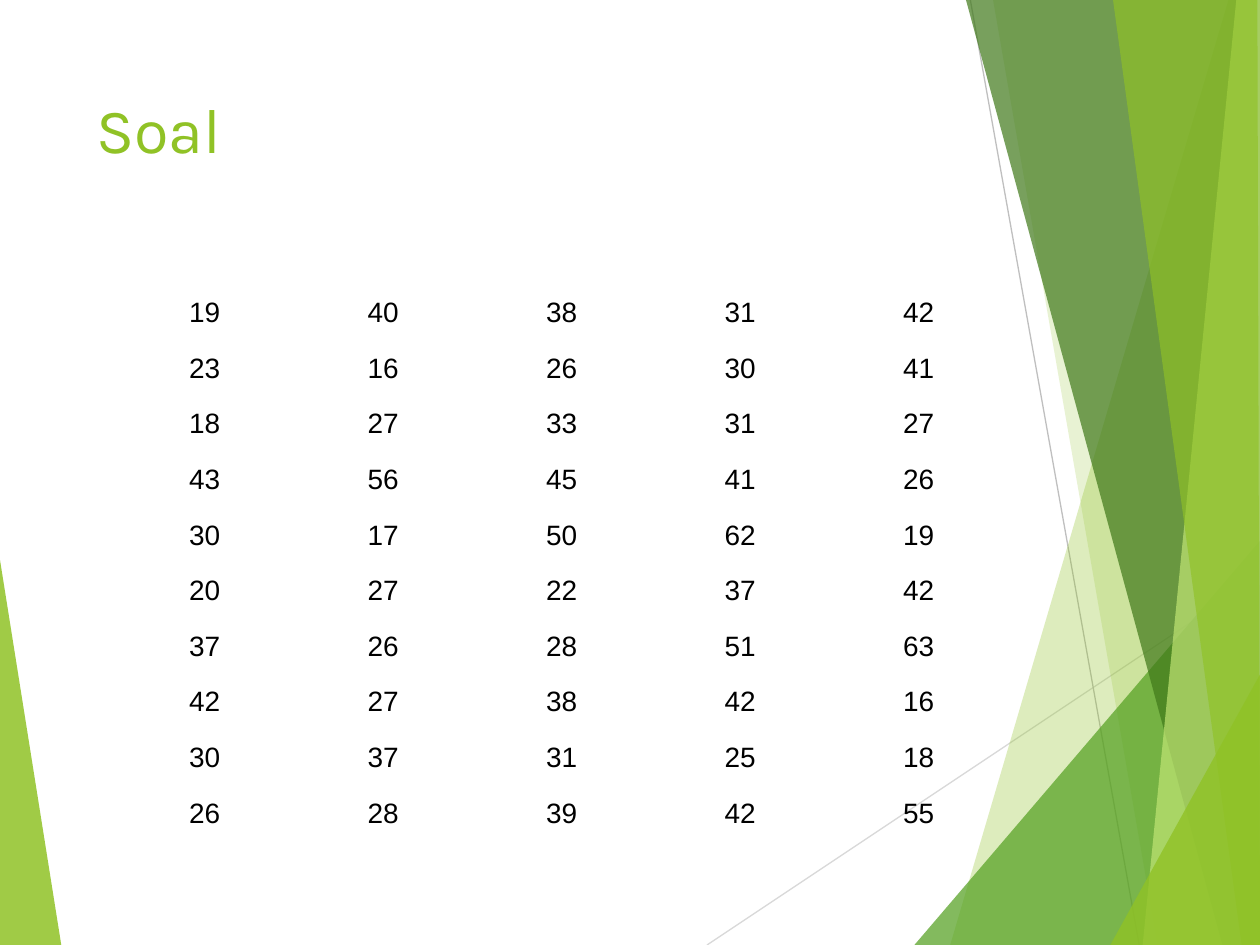
from dataclasses import dataclass

from lxml import etree
from pptx import Presentation
from pptx import util as u
from pptx.dml.color import RGBColor
from pptx.enum import shapes, text
from pptx.oxml import ns

Pt = u.Pt


@dataclass(frozen=True)
class Theme:
    lime: str = "90C226"
    green: str = "54A021"
    forest: str = "3F7819"
    pale: str = "C0E474"
    light_line: str = "D9D9D9"
    dark_line: str = "BFBFBF"
    ink: str = "000000"
    title_font: str = "Karla"
    body_font: str = "Arial"
    title_size: int = 36
    body_size: int = 16


THEME = Theme()
WIDTH, HEIGHT = 720, 540
NO_STYLE = "{2D5ABB26-0587-4C30-8999-92F81FD0307C}"

LINES = [
    ((404, 540), (720.5, 329), THEME.light_line),
    ((554.5, 0), (651, 540), THEME.dark_line),
]

LEFT_FACET = ([(0, 320), (35, 540), (0, 540)], THEME.lime, 85)
RIGHT_FACETS = [
    ([(702, 0), (543, 540), (720, 540), (720, 0)], THEME.lime, 30),
    ([(567.5, 0), (661.5, 540), (720, 540), (720, 0)], THEME.lime, 20),
    ([(522.5, 540), (720, 309), (720, 540)], THEME.green, 72),
    ([(552, 0), (698.5, 540), (720, 540), (720, 0)], THEME.forest, 70),
    ([(706.5, 0), (653, 540), (720, 540), (720, 0)], THEME.pale, 70),
    ([(636, 0), (709.5, 540), (720, 540), (718.5, 0)], THEME.lime, 65),
    ([(634.5, 540), (720, 385.5), (720, 540)], THEME.lime, 80),
]

SCORES = [
    [19, 40, 38, 31, 42],
    [23, 16, 26, 30, 41],
    [18, 27, 33, 31, 27],
    [43, 56, 45, 41, 26],
    [30, 17, 50, 62, 19],
    [20, 27, 22, 37, 42],
    [37, 26, 28, 51, 63],
    [42, 27, 38, 42, 16],
    [30, 37, 31, 25, 18],
    [26, 28, 39, 42, 55],
]


def set_attrs(obj, values):
    for name, value in values.items():
        setattr(obj, name, value)


def write(p, content, font, size, color):
    r = p.add_run()
    r.text = content
    set_attrs(r.font, {"name": font, "size": Pt(size)})
    r.font.color.rgb = RGBColor.from_string(color)


def add_facet(s, points, color, opacity):
    corners = [(Pt(x), Pt(y)) for x, y in points]
    builder = s.shapes.build_freeform(*corners[0])
    builder.add_line_segments(corners[1:], close=True)
    sp = builder.convert_to_shape()
    sp.shadow.inherit = False
    sp.line.fill.background()
    sp.fill.solid()
    sp.fill.fore_color.rgb = RGBColor.from_string(color)
    clr = sp._element.spPr.find(".//" + ns.qn("a:srgbClr"))
    etree.SubElement(clr, ns.qn("a:alpha"), val=str(opacity * 1000))


def add_line(s, start, end, color):
    ends = [Pt(v) for v in (*start, *end)]
    line = s.shapes.add_connector(shapes.MSO_CONNECTOR.STRAIGHT, *ends)
    line.line.width = Pt(0.75)
    line.line.color.rgb = RGBColor.from_string(color)
    etree.SubElement(line._element.spPr, ns.qn("a:effectLst"))


def add_title(s, content):
    sp = s.shapes.add_textbox(Pt(48), Pt(48), Pt(500), Pt(104))
    tf = sp.text_frame
    set_attrs(tf, {"word_wrap": True, "vertical_anchor": text.MSO_ANCHOR.TOP})
    write(tf.paragraphs[0], content, THEME.title_font, THEME.title_size, THEME.lime)


def add_scores(s, rows):
    frame = s.shapes.add_table(
        len(rows), len(rows[0]), Pt(66), Pt(156), Pt(510), Pt(318)
    )
    table = frame.table
    set_attrs(table, {"first_row": False, "horz_banding": False})
    table._tbl.tblPr.find(ns.qn("a:tableStyleId")).text = NO_STYLE
    cell_format = {
        "vertical_anchor": text.MSO_ANCHOR.BOTTOM,
        "margin_left": Pt(0.75),
        "margin_right": Pt(0.75),
        "margin_top": Pt(0.75),
        "margin_bottom": 0,
    }
    for i, row in enumerate(rows):
        for j, score in enumerate(row):
            cell = table.cell(i, j)
            set_attrs(cell, cell_format)
            cell.fill.background()
            p = cell.text_frame.paragraphs[0]
            p.alignment = text.PP_ALIGN.CENTER
            write(p, str(score), THEME.body_font, THEME.body_size, THEME.ink)


def main():
    prs = Presentation()
    set_attrs(prs, {"slide_width": Pt(WIDTH), "slide_height": Pt(HEIGHT)})
    s = prs.slides.add_slide(prs.slide_layouts[6])
    add_facet(s, *LEFT_FACET)
    for line in LINES:
        add_line(s, *line)
    for facet in RIGHT_FACETS:
        add_facet(s, *facet)
    add_title(s, "Soal")
    add_scores(s, SCORES)
    prs.save("out.pptx")


if __name__ == "__main__":
    main()
